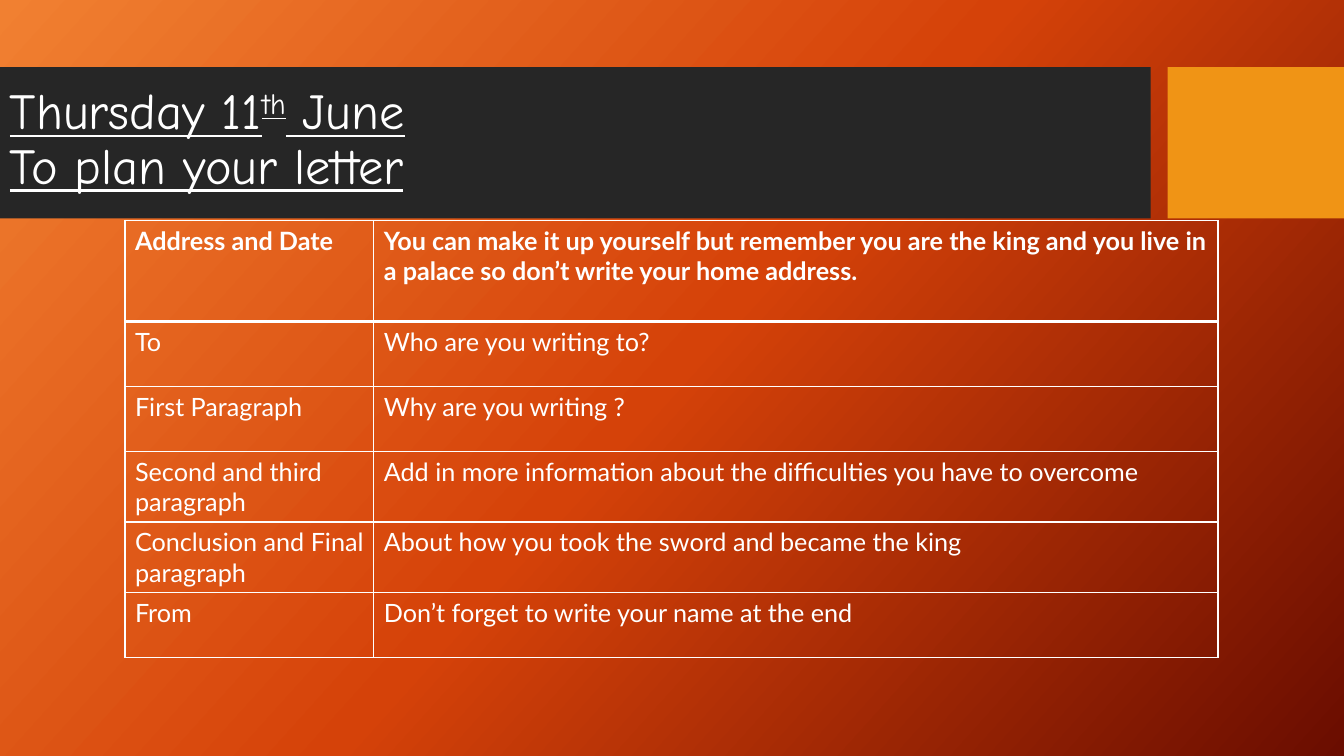
from pptx import Presentation
from pptx.dml.color import RGBColor
from pptx.enum.shapes import MSO_SHAPE
from pptx.enum.text import MSO_ANCHOR
from pptx.oxml.ns import qn
from pptx.util import Emu, Pt
from lxml.etree import SubElement

EMU_PER_PX = 9525  # 96 px to the inch
WHITE = "FFFFFF"
TITLE_FORMAT = {"name": "Comic Neue", "size": Pt(36), "underline": True}
CELL_FORMAT = {"name": "Lato", "size": Pt(18)}

GRADIENT_STOPS = [(0, "F18031"), (50, "D54209"), (100, "6A0D00")]
COLUMN_WIDTHS = [237, 804]
PLAN_ROWS = [
    (96, "Address and Date",
     "You can make it up yourself but remember you are the king and you live in "
     "a palace so don’t write your home address."),
    (62, "To", "Who are you writing to?"),
    (62, "First Paragraph", "Why are you writing ?"),
    (67, "Second and third\nparagraph",
     "Add in more information about the difficulties you have to overcome"),
    (67, "Conclusion and Final paragraph",
     "About how you took the sword and became the king"),
    (62, "From", "Don’t forget to write your name at the end"),
]


def px(length):
    return Emu(length * EMU_PER_PX)


def color(hex_value):
    return RGBColor.from_string(hex_value)


def format_font(font, values):
    for name, value in values.items():
        setattr(font, name, value)
    font.color.rgb = color(WHITE)


def paint_background(page):
    fill = page.background.fill
    fill.gradient()
    fill.gradient_angle = 318
    stop_list = next(page.element.iter(qn("a:gsLst")))
    for stop in list(stop_list):
        stop_list.remove(stop)
    for position, hex_value in GRADIENT_STOPS:
        stop = SubElement(stop_list, qn("a:gs"), pos=str(position * 1000))
        SubElement(stop, qn("a:srgbClr"), val=hex_value)


def add_band(page, left, width, hex_value):
    band = page.shapes.add_shape(
        MSO_SHAPE.RECTANGLE, px(left), px(64), px(width), px(144))
    band.shadow.inherit = False
    band.fill.solid()
    band.fill.fore_color.rgb = color(hex_value)
    band.line.fill.background()


def add_title(page):
    box = page.shapes.add_textbox(px(0), px(67), px(1009), px(134))
    frame = box.text_frame
    frame.word_wrap = True
    frame.vertical_anchor = MSO_ANCHOR.MIDDLE
    para = frame.paragraphs[0]
    para.line_spacing = 0.9

    def add_span(text):
        span = para.add_run()
        span.text = text
        format_font(span.font, TITLE_FORMAT)
        return span

    add_span("Thursday 11")
    ordinal = add_span("th")
    ordinal.font._element.set("baseline", "30000")
    add_span(" June")
    para.add_line_break()
    add_span("To plan your letter")


def add_borders(cell, widths):
    properties = cell._tc.get_or_add_tcPr()
    for side, width in widths.items():
        line = SubElement(properties, qn(f"a:ln{side}"), w=str(Pt(width)))
        solid = SubElement(line, qn("a:solidFill"))
        SubElement(solid, qn("a:srgbClr"), val=WHITE)


def add_plan_table(page):
    total_height = sum(height for height, *_ in PLAN_ROWS)
    table = page.shapes.add_table(
        len(PLAN_ROWS), len(COLUMN_WIDTHS), px(119), px(210),
        px(sum(COLUMN_WIDTHS)), px(total_height)).table
    table.first_row = table.horz_banding = False
    for column, width in zip(table.columns, COLUMN_WIDTHS):
        column.width = px(width)
    for row_index, (height, *texts) in enumerate(PLAN_ROWS):
        table.rows[row_index].height = px(height)
        is_header = row_index == 0
        # The rule under the header row is twice as thick
        widths = {"L": 1, "R": 1, "T": 2 if row_index == 1 else 1,
                  "B": 2 if is_header else 1}
        for column_index, text in enumerate(texts):
            cell = table.cell(row_index, column_index)
            add_borders(cell, widths)
            cell.fill.background()
            cell.text = text
            for para in cell.text_frame.paragraphs:
                for span in para.runs:
                    format_font(span.font, CELL_FORMAT | {"bold": is_header})


def main():
    deck = Presentation()
    deck.slide_width, deck.slide_height = px(1280), px(720)
    page = deck.slides.add_slide(deck.slide_layouts[6])

    # Backdrop and title bar
    paint_background(page)
    add_band(page, 0, 1096, "262626")
    add_band(page, 1112, 168, "F09415")

    # Title and letter plan
    add_title(page)
    add_plan_table(page)
    deck.save("out.pptx")


if __name__ == "__main__":
    main()
